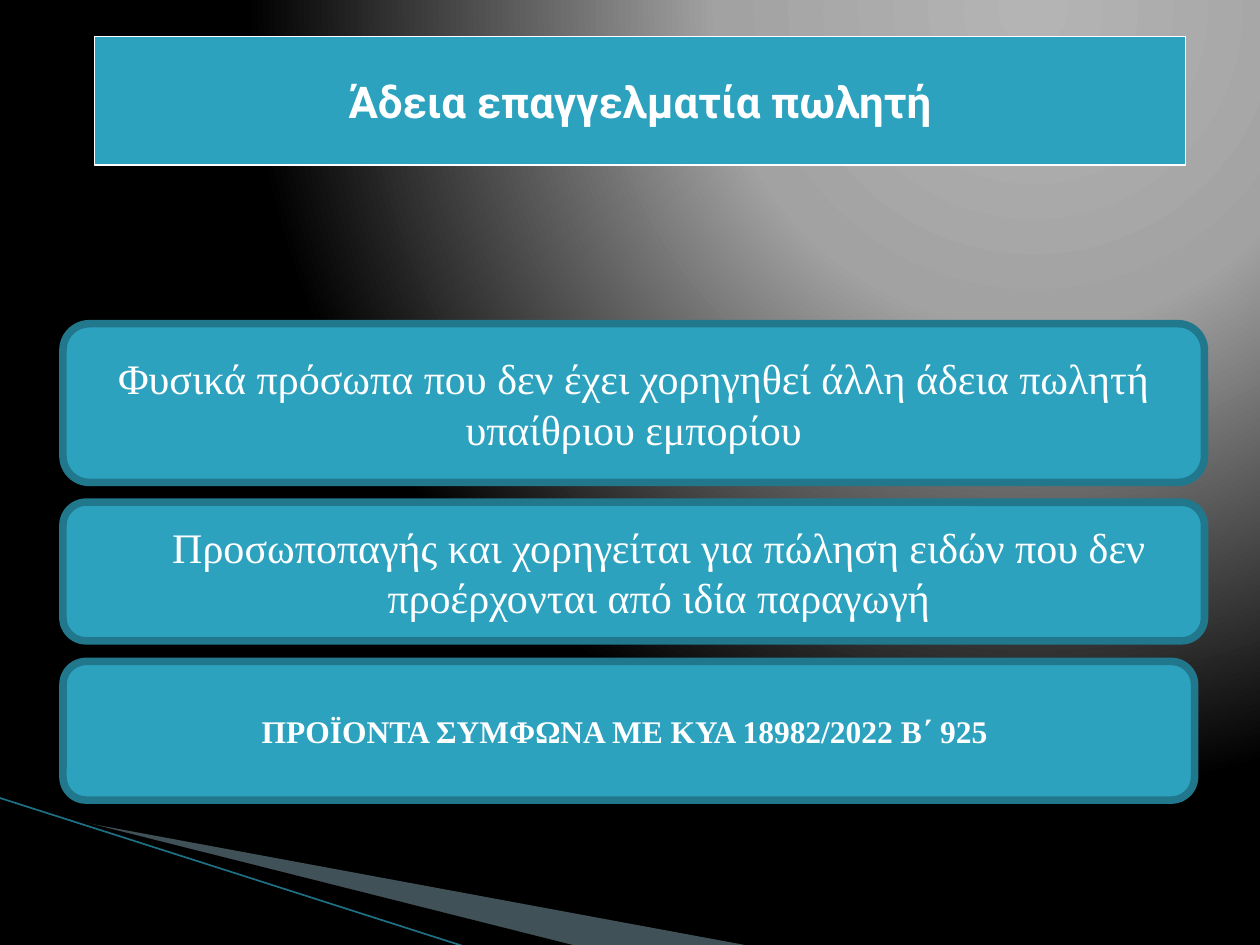
from pptx import Presentation
from pptx.dml.color import RGBColor
from pptx.enum.shapes import MSO_CONNECTOR, MSO_SHAPE
from pptx.enum.text import MSO_ANCHOR, PP_ALIGN
from pptx.oxml import parse_xml
from pptx.oxml.ns import nsdecls, qn
from pptx.util import Pt

RECTANGLE = MSO_SHAPE.RECTANGLE
ROUNDED = MSO_SHAPE.ROUNDED_RECTANGLE
STRAIGHT = MSO_CONNECTOR.STRAIGHT
MIDDLE = MSO_ANCHOR.MIDDLE
CENTER = PP_ALIGN.CENTER

COLORS = {
    "panel": "2DA2BF",
    "border": "21788D",
    "text": "FFFFFF",
    "black": "000000",
    "wedge": "A0CBDC",
    "streak": "1E7185",
}
GLOW_STOPS = [(0, "B4B4B4"), (40, "A2A2A2"), (100, "000000")]
SERIF = "Times New Roman"


def rgb(name):
    return RGBColor.from_string(COLORS[name])


def element(tag, content="", **attributes):
    settings = " ".join(f'{key}="{value}"' for key, value in attributes.items())
    return parse_xml(f"<a:{tag} {nsdecls('a')} {settings}>{content}</a:{tag}>")


class SlideBuilder:
    def __init__(self, page):
        self.page = page

    def background(self):
        self.page.background.fill.gradient()
        gradient = self.page.element.find(".//" + qn("a:gradFill"))
        stops = "".join(
            f'<a:gs pos="{place * 1000}"><a:srgbClr val="{color}"/></a:gs>'
            for place, color in GLOW_STOPS
        )
        glow = element(
            "gradFill",
            f'<a:gsLst>{stops}</a:gsLst><a:path path="circle">'
            '<a:fillToRect l="65000" t="0" r="0" b="98000"/></a:path>',
            rotWithShape=1,
        )
        gradient.getparent().replace(gradient, glow)

    def wedge(self, points, color, opacity=None):
        corners = [(Pt(x), Pt(y)) for x, y in points]
        builder = self.page.shapes.build_freeform(*corners[0])
        builder.add_line_segments(corners[1:], close=True)
        shape = builder.convert_to_shape()
        shape.shadow.inherit = False
        shape.fill.solid()
        shape.fill.fore_color.rgb = rgb(color)
        shape.line.fill.background()
        if opacity is not None:
            fill_color = shape.element.spPr.find(".//" + qn("a:srgbClr"))
            fill_color.append(element("alpha", val=opacity * 1000))

    def line(self, start, end, color, width):
        ends = [Pt(value) for value in (*start, *end)]
        connector = self.page.shapes.add_connector(STRAIGHT, *ends)
        connector.line.color.rgb = rgb(color)
        connector.line.width = Pt(width)
        connector.element.spPr.append(element("effectLst"))

    def panel(self, frame, text, size, kind=ROUNDED, font=SERIF, bold=False,
              border="border", border_width=4.33, bullet=False):
        box = self.page.shapes.add_shape(kind, *[Pt(value) for value in frame])
        box.shadow.inherit = False
        box.fill.solid()
        box.fill.fore_color.rgb = rgb("panel")
        box.line.color.rgb = rgb(border)
        box.line.width = Pt(border_width)
        box.text_frame.text = text
        box.text_frame.word_wrap = True
        box.text_frame.vertical_anchor = MIDDLE
        para = box.text_frame.paragraphs[0]
        para.alignment = CENTER
        if bullet:
            self.add_bullet(para)
        for span in para.runs:
            span.font.name = font
            span.font.size = Pt(size)
            span.font.bold = bold
            span.font.color.rgb = rgb("text")

    def add_bullet(self, para):
        properties = para._p.get_or_add_pPr()
        properties.set("marL", str(Pt(28.8)))
        properties.set("indent", str(Pt(-20.16)))
        properties.append(element("buClr", f'<a:srgbClr val="{COLORS["panel"]}"/>'))
        properties.append(element("buSzPct", val=68000))
        properties.append(element("buChar", char="▶"))


def main():
    deck = Presentation()
    deck.slide_width, deck.slide_height = Pt(720), Pt(540)
    slide = SlideBuilder(deck.slides.add_slide(deck.slide_layouts[6]))

    # Background and corner decoration
    slide.background()
    slide.wedge([(39.6, 468.5), (428.4, 540.5), (328.3, 540.5), (39.6, 468)],
                "wedge", opacity=40)
    slide.wedge([(38.2, 467.3), (329, 540.5), (267.8, 541.4), (38.9, 468)], "black")
    slide.line((-0.7, 455.8), (267.1, 541.4), "streak", 0.95)

    # Statements about the licence
    left = 36
    slide.panel((left, 185, 652.3, 90.7),
                "Φυσικά πρόσωπα που δεν έχει χορηγηθεί άλλη άδεια πωλητή "
                "υπαίθριου εμπορίου", 24)
    slide.panel((left, 287, 652.3, 79.2),
                "Προσωποπαγής και χορηγείται για πώληση ειδών που δεν "
                "προέρχονται από ιδία παραγωγή", 24, bullet=True)
    slide.panel((left, 378, 646.6, 79.2),
                "ΠΡΟΪΟΝΤΑ ΣΥΜΦΩΝΑ ΜΕ ΚΥΑ 18982/2022 Β΄ 925 ", 18, bold=True)

    # Title
    slide.panel((54, 20.9, 623.5, 73.4), "Άδεια επαγγελματία πωλητή", 25,
                kind=RECTANGLE, font="Roboto", bold=True,
                border="text", border_width=1)

    deck.save("out.pptx")


if __name__ == "__main__":
    main()
